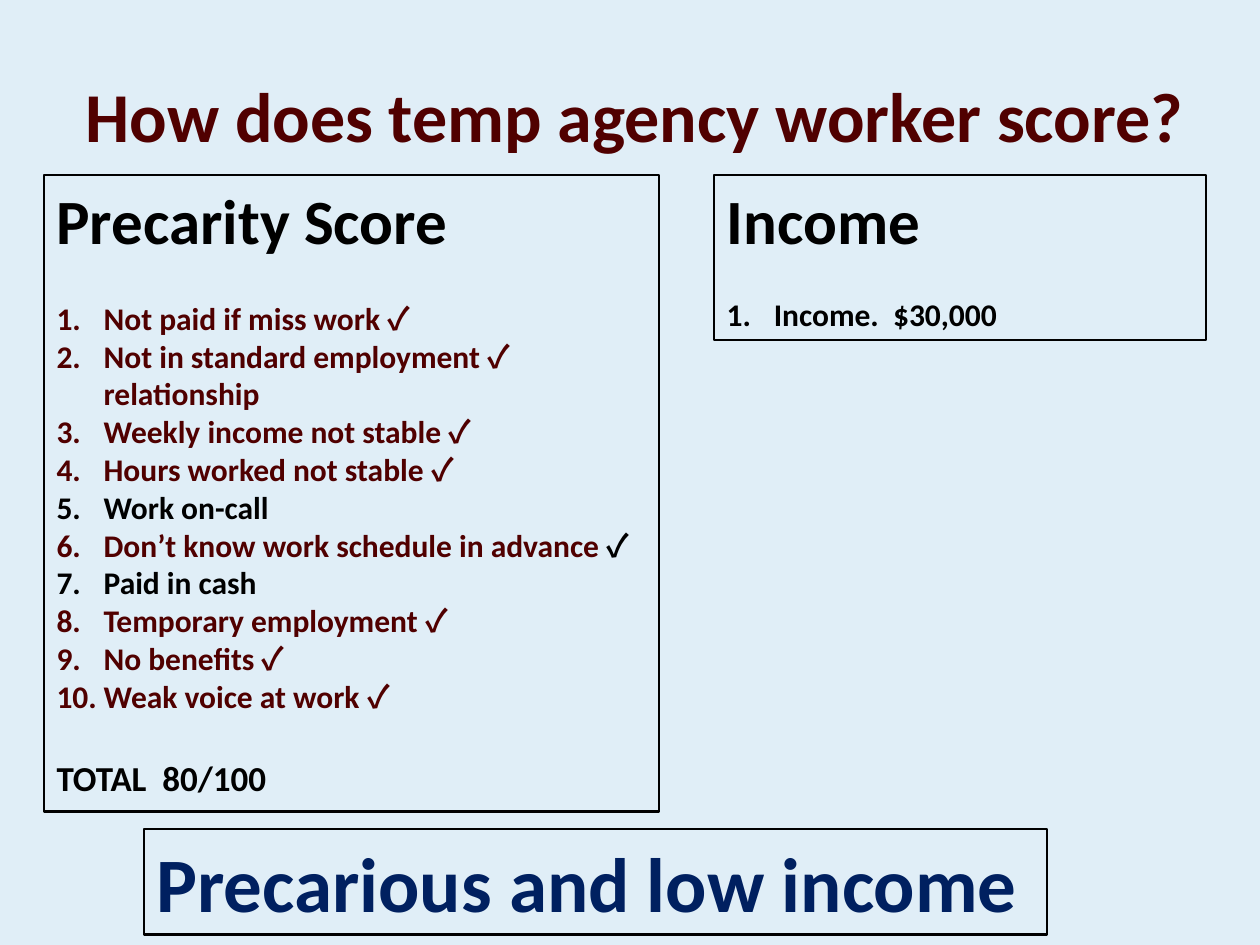
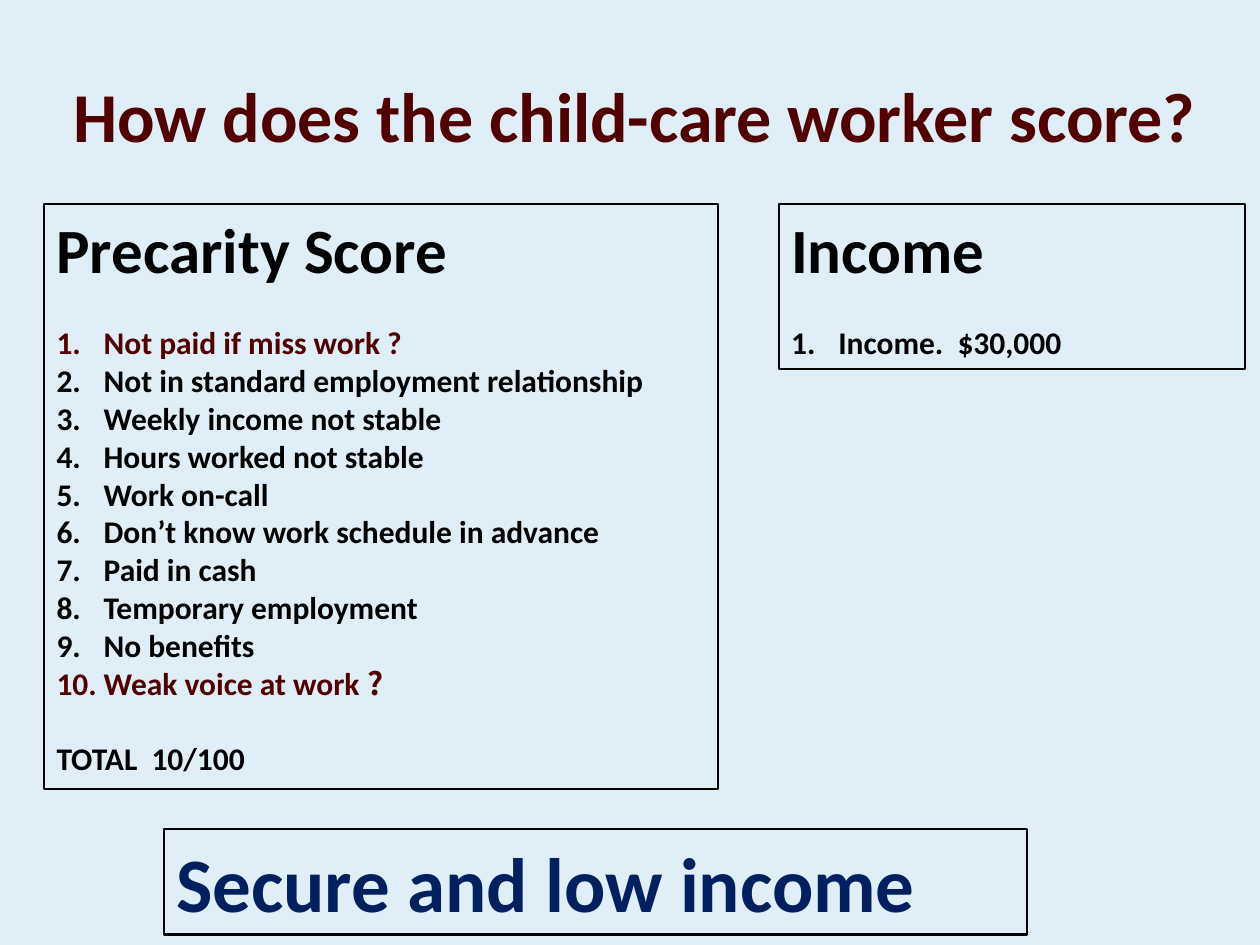
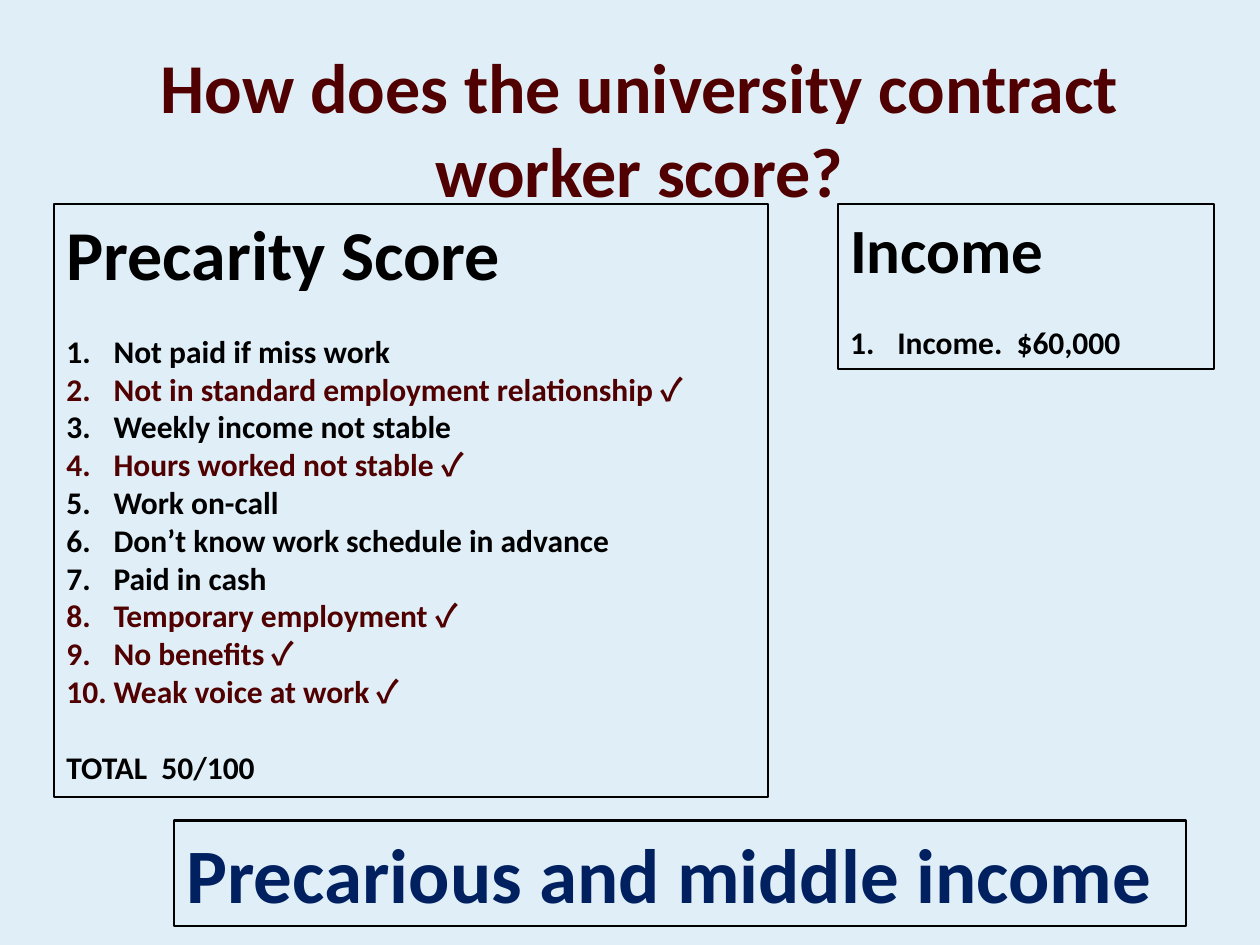
from lxml import etree
from pptx import Presentation
from pptx.dml.color import RGBColor
from pptx.enum.shapes import MSO_SHAPE
from pptx.enum.text import MSO_ANCHOR, MSO_AUTO_SIZE, PP_ALIGN
from pptx.oxml.ns import qn
from pptx.util import Cm, Pt

RECTANGLE = MSO_SHAPE.RECTANGLE
TOP, MIDDLE = MSO_ANCHOR.TOP, MSO_ANCHOR.MIDDLE
NO_AUTOFIT = MSO_AUTO_SIZE.NONE
LEFT, CENTER = PP_ALIGN.LEFT, PP_ALIGN.CENTER

PALE_BLUE = RGBColor(0xE0, 0xEE, 0xF7)
MAROON = RGBColor(0x50, 0x00, 0x00)
NAVY = RGBColor(0x00, 0x20, 0x60)
BLACK = RGBColor(0x00, 0x00, 0x00)

BODY_FONT = "Calibri"
MARK_FONT = "Noto Sans CJK JP"
LINE_RATIO = 1.2
ITEM_SIZE = 18
NUMBER_INDENT = Cm(0.95)
TITLE_ONLY = 5

INDICATORS = [
    "Not paid if miss work",
    "Not in standard employment relationship",
    "Weekly income not stable",
    "Hours worked not stable",
    "Work on-call",
    "Don’t know work schedule in advance",
    "Paid in cash",
    "Temporary employment",
    "No benefits",
    "Weak voice at work",
]

WORKERS = [
    {
        "title": "How does temp agency worker score?",
        "title_box": (0.89, 1.32, 23.8, 1.96),
        "marks": {n: "✓" for n in (1, 2, 3, 4, 6, 8, 9, 10)},
        "mark_before_last_word": 2,
        "black_mark": 6,
        "total": "TOTAL  80/100",
        "heading_size": 36,
        "total_size": 20,
        "score_box": (0.89, 3.53, 12.4, 12.83),
        "income": "Income.  $30,000",
        "income_box": (14.4, 3.53, 9.91, 3.33),
        "verdict": "Precarious and low income",
        "verdict_box": (2.9, 16.71, 18.21, 2.13),
    },
    {
        "title": "How does the child-care worker score?",
        "title_box": (0.89, 1.32, 23.8, 1.96),
        "marks": {1: "?", 10: "?"},
        "body_font_mark": 1,
        "total": "TOTAL  10/100",
        "heading_size": 36,
        "total_size": 18,
        "score_box": (0.89, 4.11, 13.59, 11.79),
        "income": "Income.  $30,000",
        "income_box": (15.7, 4.11, 9.4, 3.33),
        "verdict": "Secure and low income",
        "verdict_box": (3.3, 16.71, 17.4, 2.13),
    },
    {
        "title": "How does the university contract worker score?",
        "title_box": (0.89, 0.74, 24, 3.68),
        "marks": {n: "✓" for n in (2, 4, 8, 9, 10)},
        "total": "TOTAL  50/100",
        "heading_size": 40,
        "total_size": 18,
        "score_box": (1.09, 4.11, 14.4, 11.96),
        "income": "Income.  $60,000",
        "income_box": (16.89, 4.11, 7.59, 3.33),
        "verdict": "Precarious and middle income",
        "verdict_box": (3.51, 16.54, 20.4, 2.13),
    },
]


def add_text(paragraph, text, size=ITEM_SIZE, color=BLACK, font=BODY_FONT,
             align=LEFT, gap=0, numbered=False):
    if not paragraph.runs:
        paragraph.alignment = align
        paragraph.space_before = Pt(gap)
        if numbered:
            paragraph.line_spacing = Pt(ITEM_SIZE * LINE_RATIO)
            properties = paragraph._p.get_or_add_pPr()
            properties.set("marL", str(NUMBER_INDENT))
            properties.set("indent", str(-NUMBER_INDENT))
            etree.SubElement(properties, qn("a:buAutoNum"), type="arabicPeriod")
    run = paragraph.add_run()
    run.text = text
    run.font.size = Pt(size)
    run.font.bold = True
    run.font.name = font
    run.font.color.rgb = color


def set_frame(frame, anchor):
    frame.word_wrap = True
    frame.auto_size = NO_AUTOFIT
    frame.vertical_anchor = anchor


def add_panel(slide, box, heading, size, color=BLACK):
    panel = slide.shapes.add_shape(RECTANGLE, *map(Cm, box))
    panel.shadow.inherit = False
    panel.fill.background()
    panel.line.color.rgb = BLACK
    panel.line.width = Pt(1.25)
    frame = panel.text_frame
    set_frame(frame, TOP)
    add_text(frame.paragraphs[0], heading, size=size, color=color)
    return frame


def add_indicator(paragraph, number, label, worker, gap):
    mark = worker["marks"].get(number)
    if not mark:
        add_text(paragraph, label, gap=gap, numbered=True)
        return
    ending = ""
    if number == worker.get("mark_before_last_word"):
        label, last_word = label.rsplit(" ", 1)
        ending = " " + last_word
    mark_color = BLACK if number == worker.get("black_mark") else MAROON
    mark_font = BODY_FONT if number == worker.get("body_font_mark") else MARK_FONT
    add_text(paragraph, label + " ", color=MAROON, gap=gap, numbered=True)
    add_text(paragraph, mark, color=mark_color, font=mark_font)
    if ending:
        add_text(paragraph, ending, color=MAROON)


def add_worker_slide(deck, worker):
    slide = deck.slides.add_slide(deck.slide_layouts[TITLE_ONLY])
    title = slide.shapes.title
    title.left, title.top, title.width, title.height = map(Cm, worker["title_box"])
    set_frame(title.text_frame, MIDDLE)
    add_text(title.text_frame.paragraphs[0], worker["title"], size=40,
             color=MAROON, align=CENTER)

    score = add_panel(slide, worker["score_box"], "Precarity Score",
                      worker["heading_size"])
    gap = worker["total_size"] * LINE_RATIO
    for number, label in enumerate(INDICATORS, 1):
        add_indicator(score.add_paragraph(), number, label, worker,
                      gap if number == 1 else 0)
    add_text(score.add_paragraph(), worker["total"], size=worker["total_size"], gap=gap)

    income = add_panel(slide, worker["income_box"], "Income", 36)
    add_text(income.add_paragraph(), worker["income"],
             gap=ITEM_SIZE * LINE_RATIO, numbered=True)

    add_panel(slide, worker["verdict_box"], worker["verdict"], 44, NAVY)


def main():
    deck = Presentation()
    deck.slide_width, deck.slide_height = Cm(25.4), Cm(19.05)
    backdrop = deck.slide_master.background.fill
    backdrop.solid()
    backdrop.fore_color.rgb = PALE_BLUE
    for worker in WORKERS:
        add_worker_slide(deck, worker)
    deck.save("out.pptx")


if __name__ == "__main__":
    main()
